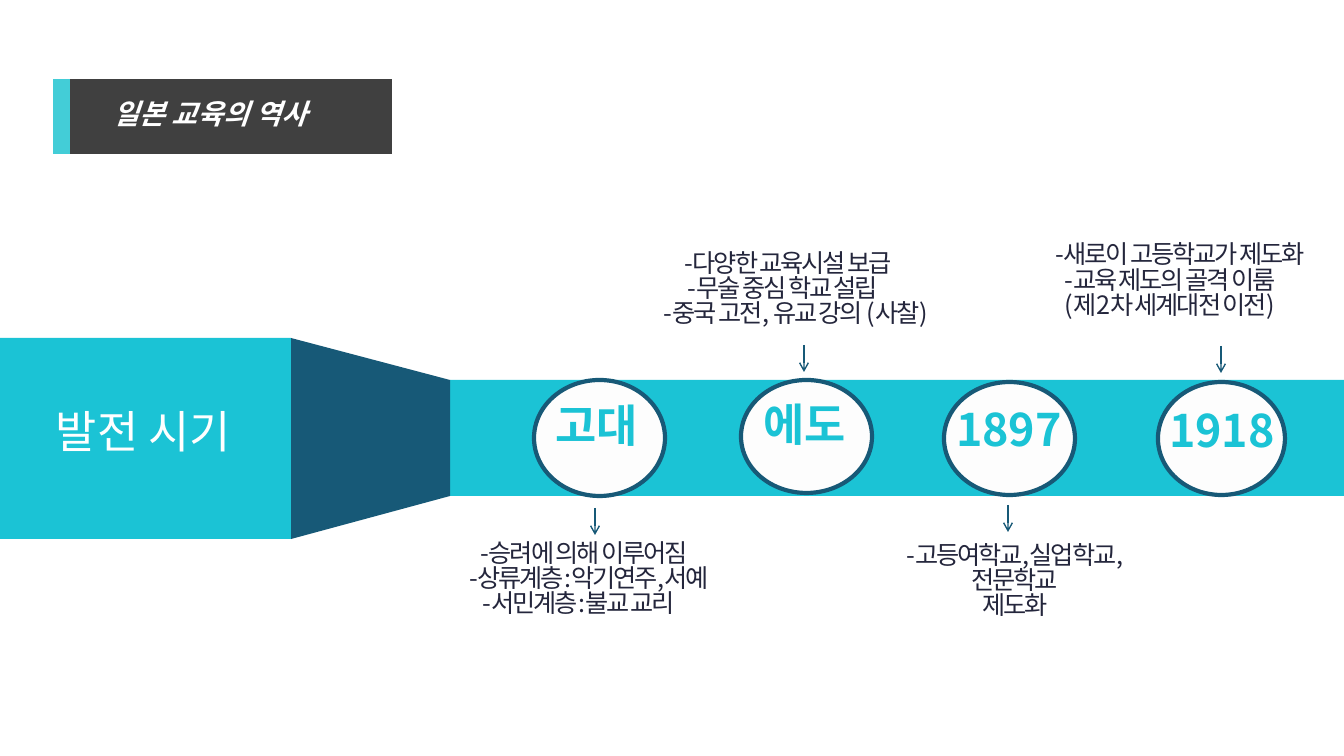
import pptx
import pptx.util
import pptx.dml.color
import pptx.enum.shapes
import pptx.enum.text
from lxml import etree

RGB = pptx.dml.color.RGBColor
TURQUOISE = RGB(0x1B, 0xC3, 0xD5)
NAVY = RGB(0x17, 0x59, 0x77)
INK = RGB(0x24, 0x26, 0x3C)
WHITE = RGB(0xFF, 0xFF, 0xFF)
OFF_WHITE = RGB(0xFD, 0xFD, 0xFD)
CHARCOAL = RGB(0x40, 0x40, 0x40)
AQUA = RGB(0x43, 0xCD, 0xD7)
FONT = "Noto Sans CJK KR"
PX = 914400 / 100.8
A = "{http://schemas.openxmlformats.org/drawingml/2006/main}"
KINDS = pptx.enum.shapes.MSO_SHAPE
ALIGN = pptx.enum.text.PP_ALIGN


def px(*lengths):
    return [round(length * PX) for length in lengths]


def write(frame, lines, align=ALIGN.CENTER, tracking=0, **font_format):
    """Fill a frame with (text, left indent) lines."""
    frame.word_wrap = True
    frame.margin_left = frame.margin_right = 0
    for number, (text, indent) in enumerate(lines):
        paragraph = frame.add_paragraph() if number else frame.paragraphs[0]
        paragraph.alignment = align
        paragraph.line_spacing = 0.83
        paragraph._p.get_or_add_pPr().set("marL", str(px(indent)[0]))
        run = paragraph.add_run()
        run.text = text
        run.font.color.rgb = font_format["color"]
        run.font.size = pptx.util.Pt(font_format["size"])
        for name in ("bold", "italic"):
            setattr(run.font, name, font_format.get(name, False))
        run.font.name = FONT
        properties = run._r.get_or_add_rPr()
        etree.SubElement(properties, A + "ea", typeface=FONT)
        if tracking:
            properties.set("spc", str(tracking))


deck = pptx.Presentation()
deck.slide_width, deck.slide_height = px(1344, 756)
slide = deck.slides.add_slide(deck.slide_layouts[6])
shapes = slide.shapes

# Timeline band: wide block, narrow strip and the funnel between them
block = shapes.add_shape(KINDS.RECTANGLE, *px(0, 338, 291, 201))
strip = shapes.add_shape(KINDS.RECTANGLE, *px(450, 380, 894, 116))
outline = shapes.build_freeform(291, 338, scale=PX)
outline.add_line_segments([(450, 380), (450, 496), (291, 539)], close=True)
funnel = outline.convert_to_shape()
for part, color in ((block, TURQUOISE), (strip, TURQUOISE), (funnel, NAVY)):
    part.shadow.inherit = False
    part.fill.solid()
    part.fill.fore_color.rgb = color
    part.line.fill.background()

band_label = shapes.add_textbox(*px(35, 408, 217, 64))
write(band_label.text_frame, [("발전 시기", 0)], size=32, color=WHITE)

# Title bar with a hard-edged accent at its left end
title = shapes.add_shape(KINDS.RECTANGLE, *px(53, 79, 339, 75))
title.shadow.inherit = False
title.line.fill.background()
title.fill.gradient()
title.fill.gradient_angle = 180
for stop, color in zip(title.fill.gradient_stops, (CHARCOAL, AQUA)):
    stop.position = 0.95
    stop.color.rgb = color
title.text_frame.vertical_anchor = pptx.enum.text.MSO_ANCHOR.MIDDLE
write(title.text_frame, [("일본 교육의 역사", 61)], ALIGN.LEFT,
      size=20, color=WHITE, bold=True, italic=True)

# Eras: name, circle, label box, arrow (x, top), note box, note lines
eras = [
    ("고대", (534, 380, 131, 116), (542, 402, 109, 64), (595, 508),
     (417, 537, 324, 102),
     [("-승려에 의해 이루어짐", 10), ("-상류계층:악기연주,서예", 20),
      ("-서민계층:불교 교리", 0)]),
    ("에도", (741, 380, 131, 113), (750, 401, 109, 64), (804, 345),
     (584, 247, 398, 102),
     [("-다양한 교육시설 보급", 10), ("-무술 중심 학교 설립", 0),
      ("-중국 고전, 유교 강의 (사찰)", 26)]),
    ("1897", (944, 382, 131, 113), (946, 406, 126, 64), (1008, 505),
     (880, 539, 270, 102),
     [("-고등여학교,실업학교,전문학교", 0), ("제도화", 0)]),
    ("1918", (1158, 382, 127, 113), (1159, 407, 126, 64), (1221, 346),
     (996, 239, 348, 102),
     [("-새로이 고등학교가 제도화", 20), ("-교육 제도의 골격 이룸", 0),
      ("(제2차 세계대전 이전)", 0)]),
]
for name, circle_box, label_box, (arrow_x, arrow_top), note_box, lines in eras:
    circle = shapes.add_shape(KINDS.OVAL, *px(*circle_box))
    circle.shadow.inherit = False
    circle.fill.solid()
    circle.fill.fore_color.rgb = OFF_WHITE
    circle.line.color.rgb = NAVY
    circle.line.width = pptx.util.Pt(3)

    label = shapes.add_textbox(*px(*label_box))
    write(label.text_frame, [(name, 0)], size=32, color=TURQUOISE, bold=True)

    note = shapes.add_textbox(*px(*note_box))
    write(note.text_frame, lines, tracking=-150, size=18, color=INK)

    arrow = shapes.add_connector(
        pptx.enum.shapes.MSO_CONNECTOR.STRAIGHT,
        *px(arrow_x, arrow_top, arrow_x, arrow_top + 27))
    arrow.line.color.rgb = NAVY
    arrow.line.width = pptx.util.Pt(1)
    etree.SubElement(arrow.line._get_or_add_ln(), A + "tailEnd", type="arrow")
    etree.SubElement(arrow._element.spPr, A + "effectLst")

deck.save("out.pptx")
